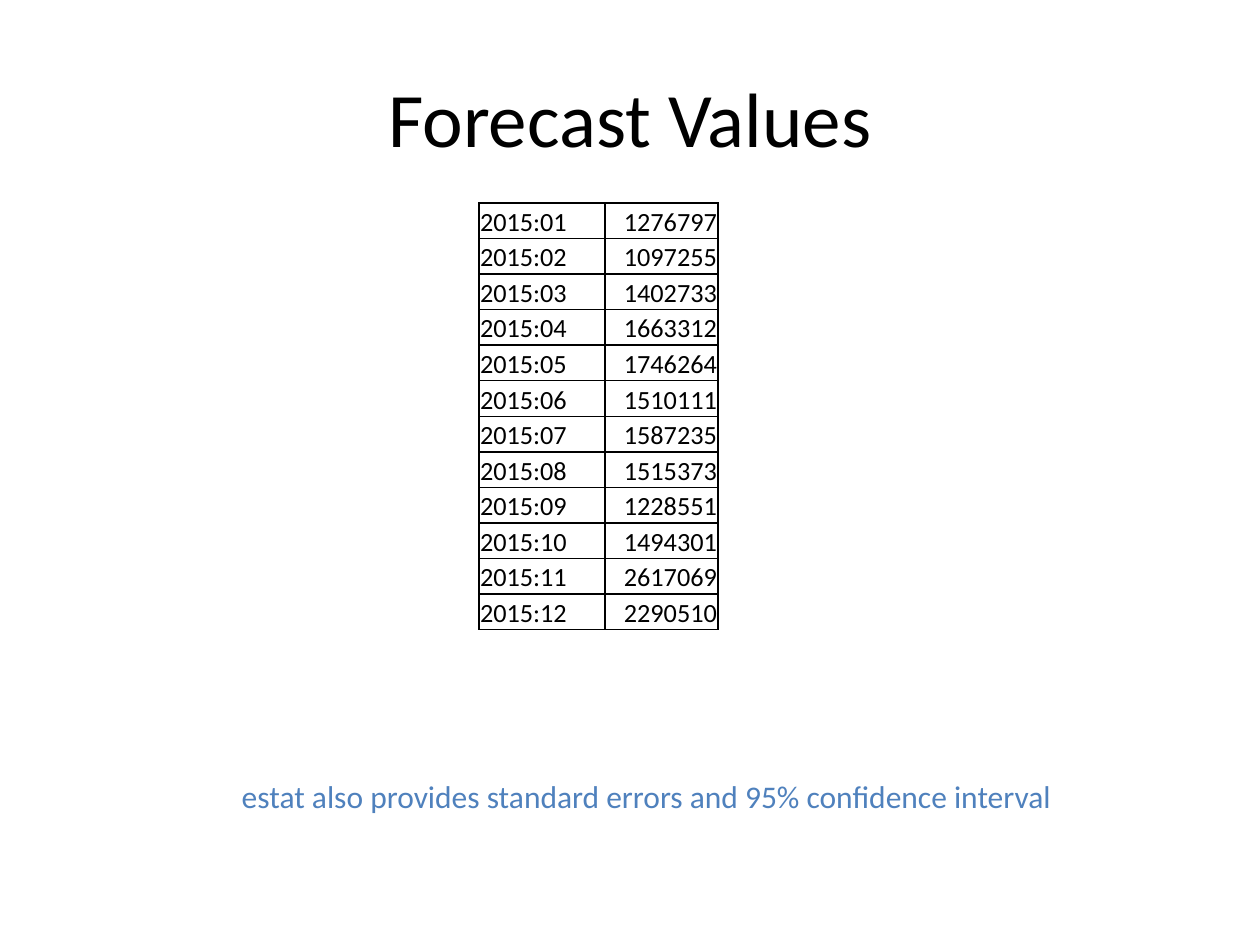
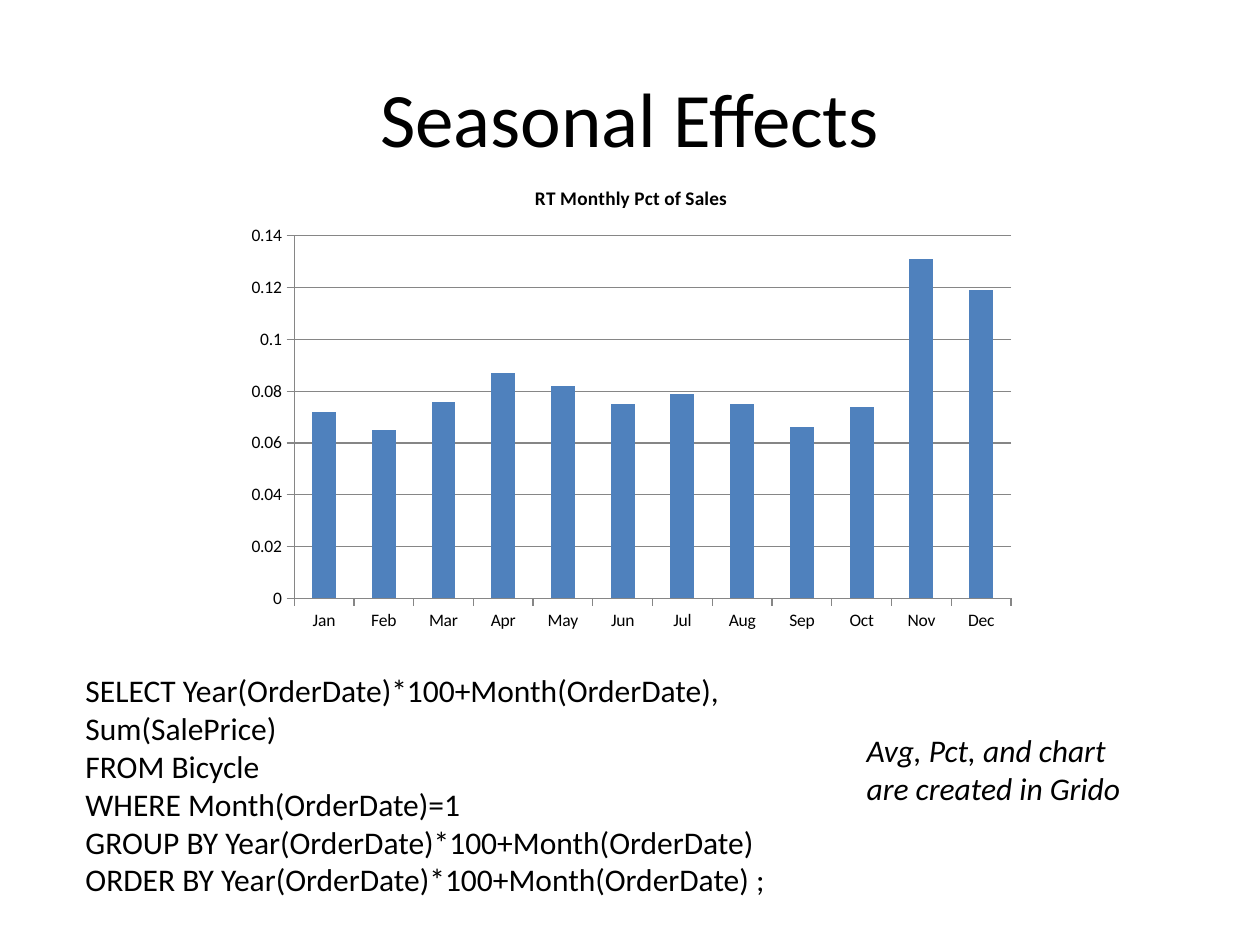
from dataclasses import dataclass

from lxml.etree import SubElement
from pptx import Presentation
from pptx.chart.data import CategoryChartData
from pptx.dml.color import RGBColor
from pptx.enum.chart import XL_CHART_TYPE, XL_TICK_MARK
from pptx.enum.text import MSO_ANCHOR, PP_ALIGN
from pptx.oxml.ns import qn
from pptx.slide import Slide
from pptx.table import _Cell
from pptx.util import Inches, Pt


@dataclass(frozen=True)
class Theme:
    font: str = "Calibri"
    ink: RGBColor = RGBColor(0x00, 0x00, 0x00)
    accent: RGBColor = RGBColor(0x4F, 0x81, 0xBD)
    grid: RGBColor = RGBColor(0x86, 0x86, 0x86)
    title_size: int = 44
    body_size: int = 18
    table_size: int = 15
    chart_title_size: int = 11
    chart_size: int = 10


THEME = Theme()

# Slide grid: 100 columns by 75 rows of square units
COLUMNS, ROWS = 100, 75
SLIDE_WIDTH, SLIDE_HEIGHT = Inches(10), Inches(7.5)


@dataclass(frozen=True)
class Frame:
    """A rectangle in grid columns and rows."""
    column: float
    row: float
    width: float
    height: float

    def box(self) -> tuple[int, int, int, int]:
        unit_x, unit_y = SLIDE_WIDTH / COLUMNS, SLIDE_HEIGHT / ROWS
        return (round(self.column * unit_x), round(self.row * unit_y),
                round(self.width * unit_x), round(self.height * unit_y))


@dataclass(frozen=True)
class TextBlock:
    frame: Frame
    text: str
    size: int = THEME.body_size
    color: RGBColor = THEME.ink
    italic: bool = False
    wrap: bool = True
    align: PP_ALIGN = PP_ALIGN.LEFT
    anchor: MSO_ANCHOR = MSO_ANCHOR.TOP


TITLE_FRAME = Frame(5, 3, 90, 12.5)

# Forecast content
FORECAST_FRAME = Frame(38, 16.1, 19, 33.9)
FORECAST_COLUMN_SHARES = (10 / 19, 9 / 19)
FORECASTS = (1276797, 1097255, 1402733, 1663312, 1746264, 1510111,
             1587235, 1515373, 1228551, 1494301, 2617069, 2290510)
FORECAST_NOTE = TextBlock(
    Frame(18.2, 61.2, 68.5, 4),
    "estat also provides standard errors and 95% confidence interval",
    color=THEME.accent, wrap=False)

# Seasonal content
CHART_FRAME = Frame(18.7, 13.1, 62.8, 37.7)
MONTHS = "Jan Feb Mar Apr May Jun Jul Aug Sep Oct Nov Dec".split()
SALES_SHARES = (0.072, 0.065, 0.076, 0.087, 0.082, 0.075,
                0.079, 0.075, 0.066, 0.074, 0.131, 0.119)
QUERY = TextBlock(Frame(5.8, 52.8, 66.9, 19.2), "\n".join((
    "SELECT Year(OrderDate)*100+Month(OrderDate), Sum(SalePrice)",
    "FROM Bicycle",
    "WHERE Month(OrderDate)=1",
    "GROUP BY Year(OrderDate)*100+Month(OrderDate)",
    "ORDER BY Year(OrderDate)*100+Month(OrderDate) ;")))
CHART_NOTE = TextBlock(Frame(67.8, 57.5, 24.8, 7.1),
                       "Avg, Pct, and chart are created in Grido", italic=True)


def style_font(font, size: int, color: RGBColor = THEME.ink,
               bold: bool = False, italic: bool = False) -> None:
    font.name, font.size = THEME.font, Pt(size)
    font.bold, font.italic = bold, italic
    font.color.rgb = color


def add_text(slide: Slide, block: TextBlock) -> None:
    text_frame = slide.shapes.add_textbox(*block.frame.box()).text_frame
    text_frame.word_wrap = block.wrap
    text_frame.vertical_anchor = block.anchor
    text_frame.text = block.text
    for paragraph in text_frame.paragraphs:
        paragraph.alignment = block.align
        for run in paragraph.runs:
            style_font(run.font, block.size, block.color, italic=block.italic)


def add_titled_slide(presentation, title: str) -> Slide:
    slide = presentation.slides.add_slide(presentation.slide_layouts[6])
    add_text(slide, TextBlock(TITLE_FRAME, title, THEME.title_size,
                              align=PP_ALIGN.CENTER, anchor=MSO_ANCHOR.MIDDLE))
    return slide


def add_borders(cell: _Cell) -> None:
    """Draw thin lines on all sides; lines must come before the fill."""
    properties = cell._tc.get_or_add_tcPr()
    for index, side in enumerate(("lnL", "lnR", "lnT", "lnB")):
        line = SubElement(properties, qn(f"a:{side}"), w=str(Pt(1)))
        fill = SubElement(line, qn("a:solidFill"))
        SubElement(fill, qn("a:srgbClr"), val=str(THEME.ink))
        properties.insert(index, line)


def fill_cell(cell: _Cell, text: str, align: PP_ALIGN) -> None:
    cell.margin_left = cell.margin_right = cell.margin_top = Inches(0.01)
    cell.margin_bottom = 0
    cell.vertical_anchor = MSO_ANCHOR.BOTTOM
    cell.fill.background()
    add_borders(cell)
    cell.text_frame.text = text
    paragraph = cell.text_frame.paragraphs[0]
    paragraph.alignment = align
    style_font(paragraph.runs[0].font, THEME.table_size)


def add_forecast_table(slide: Slide) -> None:
    left, top, width, height = FORECAST_FRAME.box()
    table = slide.shapes.add_table(len(FORECASTS), 2, left, top, width, height).table
    table.first_row = table.horz_banding = False
    for column, share in zip(table.columns, FORECAST_COLUMN_SHARES):
        column.width = round(width * share)
    for index, value in enumerate(FORECASTS):
        fill_cell(table.cell(index, 0), f"2015:{index + 1:02}", PP_ALIGN.LEFT)
        fill_cell(table.cell(index, 1), str(value), PP_ALIGN.RIGHT)


def add_sales_chart(slide: Slide) -> None:
    data = CategoryChartData(number_format="General")
    data.categories = MONTHS
    data.add_series("Series 1", SALES_SHARES)
    chart = slide.shapes.add_chart(
        XL_CHART_TYPE.COLUMN_CLUSTERED, *CHART_FRAME.box(), data).chart
    style_font(chart.font, THEME.chart_size)
    chart.has_legend = False

    # Chart title
    chart.has_title = True
    title_frame = chart.chart_title.text_frame
    title_frame.text = "RT Monthly Pct of Sales"
    style_font(title_frame.paragraphs[0].runs[0].font,
               THEME.chart_title_size, bold=True)

    # Columns
    plot = chart.plots[0]
    plot.gap_width, plot.vary_by_categories = 150, False
    series_fill = plot.series[0].format.fill
    series_fill.solid()
    series_fill.fore_color.rgb = THEME.accent

    # Axes and gridlines
    value_axis = chart.value_axis
    value_axis.minimum_scale, value_axis.maximum_scale = 0, 0.14
    value_axis.major_unit = 0.02
    value_axis.has_major_gridlines = True
    for axis in (chart.category_axis, value_axis):
        axis.major_tick_mark = XL_TICK_MARK.OUTSIDE
        axis.minor_tick_mark = XL_TICK_MARK.NONE
    for part in (chart.category_axis, value_axis, value_axis.major_gridlines):
        part.format.line.color.rgb = THEME.grid
        part.format.line.width = Pt(0.75)


def main() -> None:
    presentation = Presentation()
    presentation.slide_width, presentation.slide_height = SLIDE_WIDTH, SLIDE_HEIGHT

    # Forecast values
    forecast_slide = add_titled_slide(presentation, "Forecast Values")
    add_text(forecast_slide, FORECAST_NOTE)
    add_forecast_table(forecast_slide)

    # Seasonal effects
    seasonal_slide = add_titled_slide(presentation, "Seasonal Effects")
    add_text(seasonal_slide, QUERY)
    add_sales_chart(seasonal_slide)
    add_text(seasonal_slide, CHART_NOTE)

    presentation.save("out.pptx")


if __name__ == "__main__":
    main()
